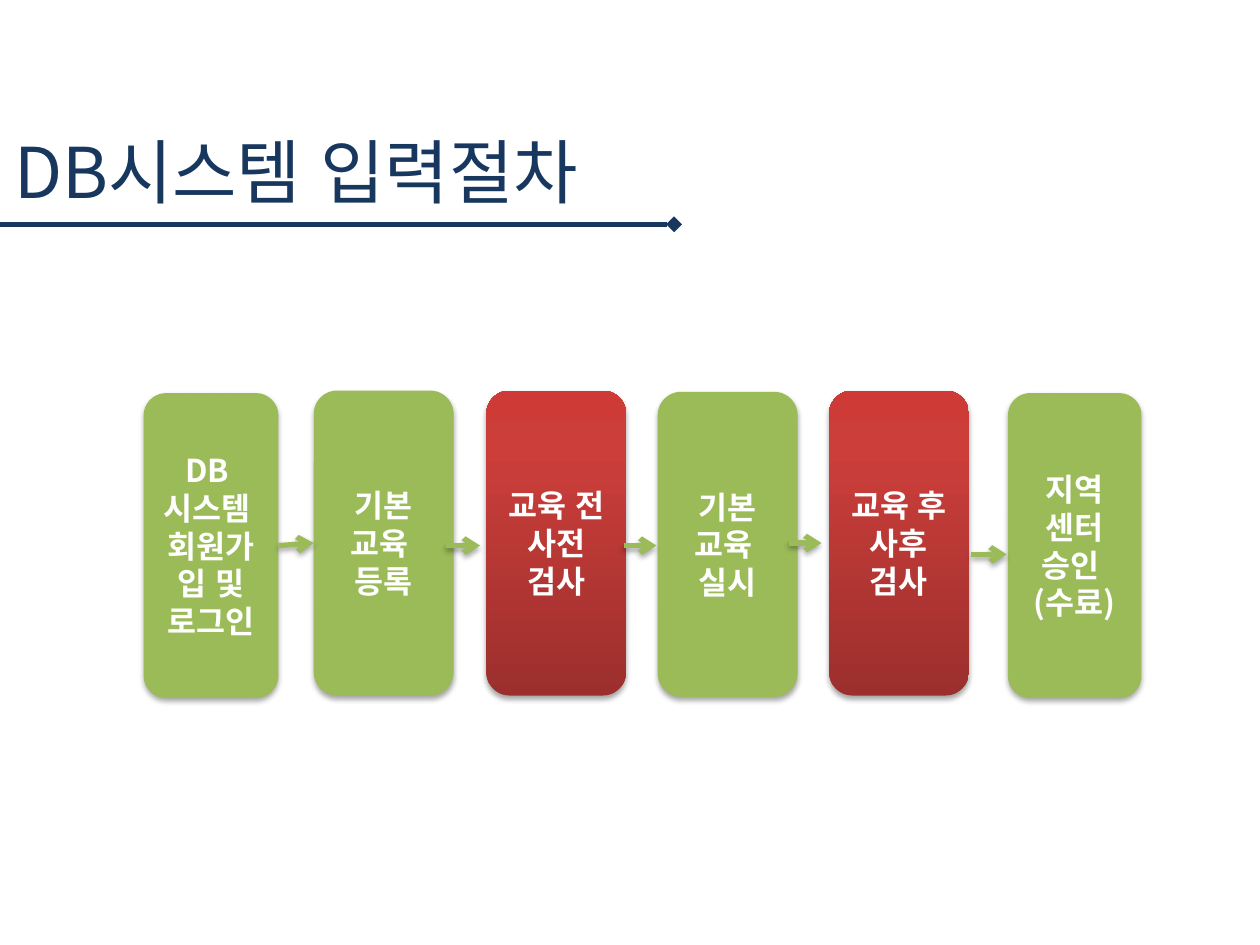
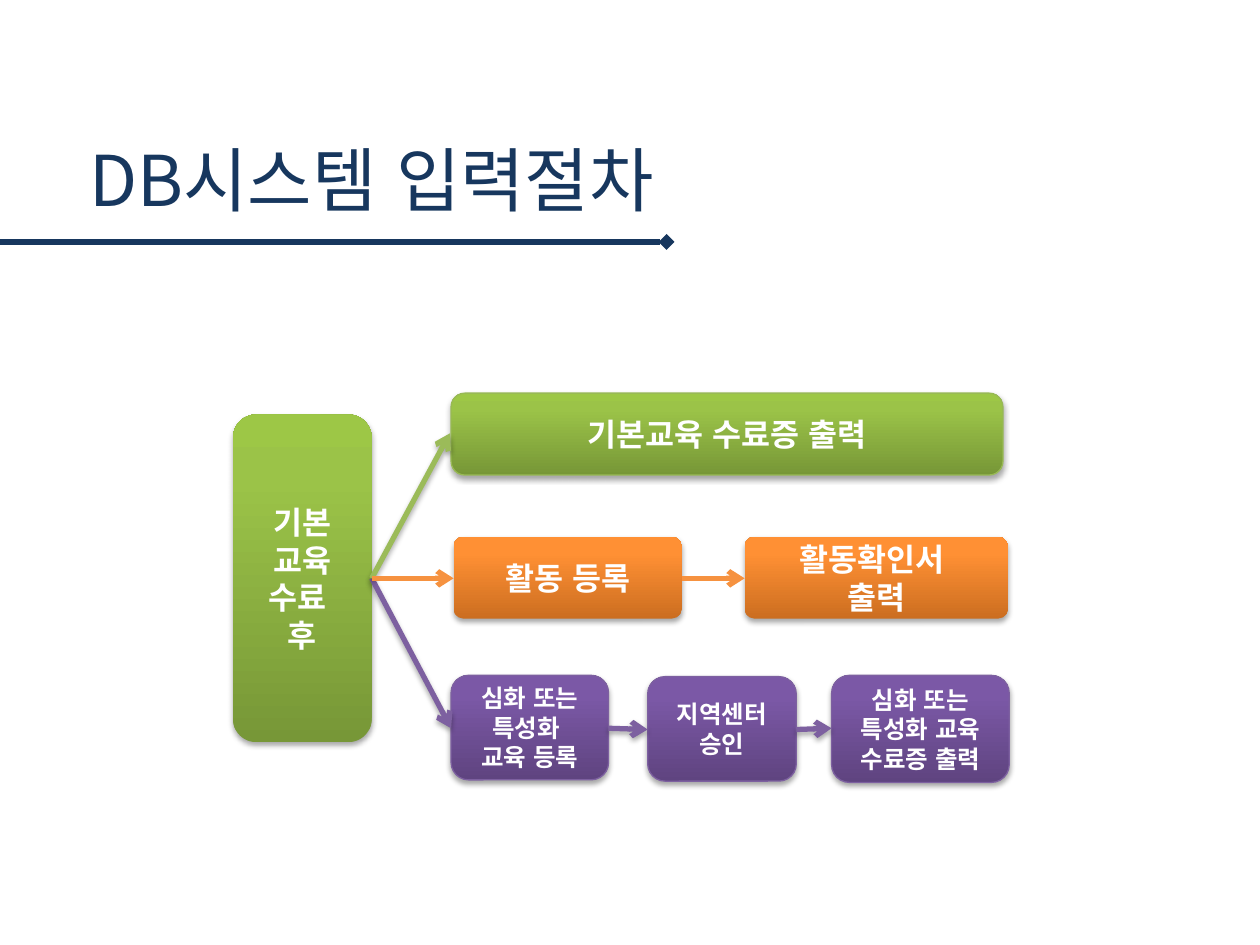
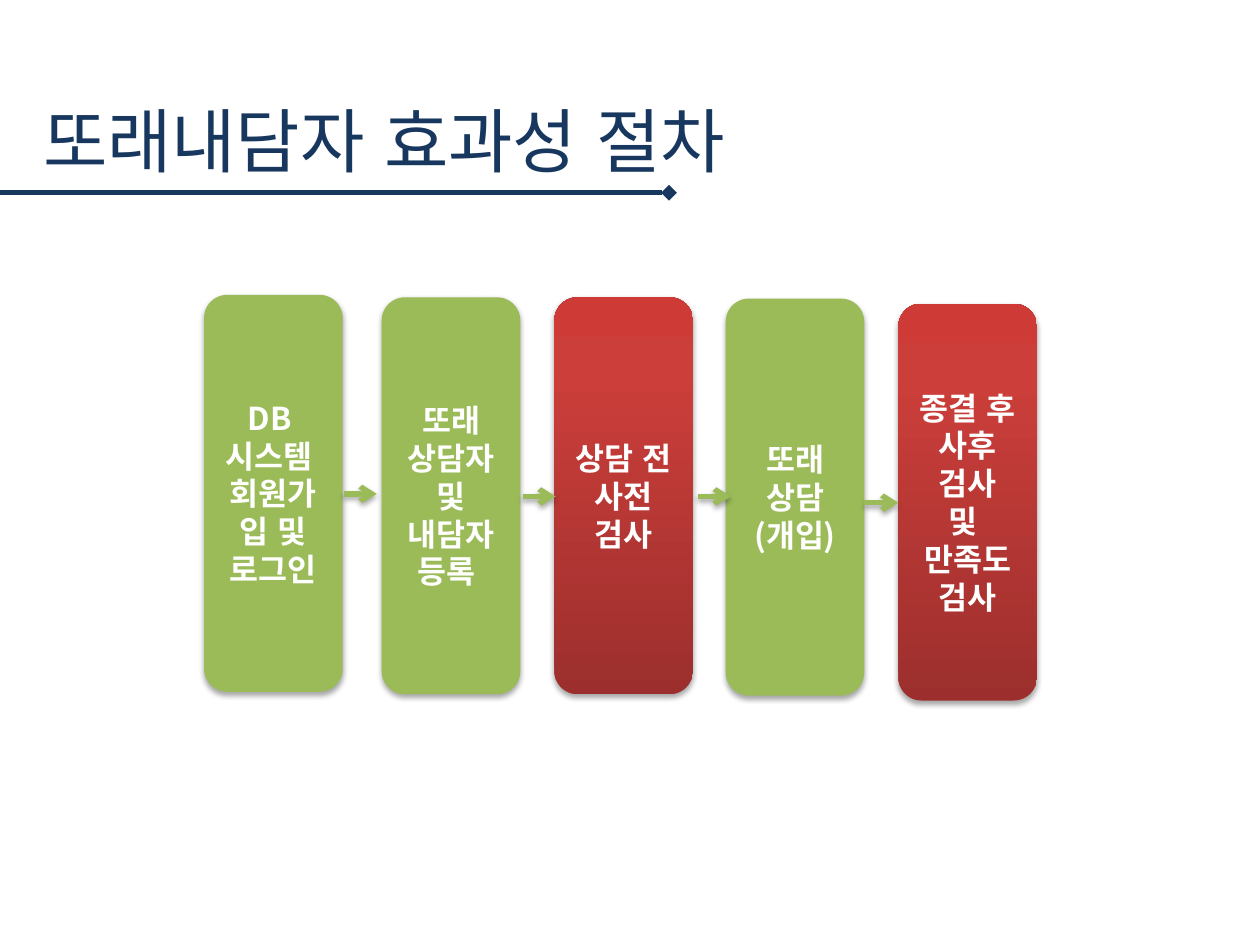
import pptx
import pptx.util
import pptx.dml.color
import pptx.enum.dml
import pptx.enum.lang
import pptx.enum.shapes
import pptx.enum.text
import pptx.oxml
import pptx.oxml.ns

Inches = pptx.util.Inches
FONT = "Noto Sans CJK KR"
COLORS = {
    "navy": "17375E", "white": "FFFFFF", "black": "000000",
    "green": "9BBB59", "edge": "98B955", "plum": "7D60A0", "amber": "F69240",
}
# Gradient stops from the foot of a box to its top
FADES = {
    "red": ("9C2F2D", "CB3E3A", "CE3B37"),
    "leaf": ("779737", "9BC348", "9DC746"),
    "orange": ("CC6E20", "FF9034", "FF9136"),
    "purple": ("5F4480", "7B58A6", "7C57A8"),
}
TITLE_W, TITLE_H, RULE_W = 6.16, 1.01, 5.35
JOIN = "DB \n시스템 \n회원가입 및 로그인"


def color(name):
    return pptx.dml.color.RGBColor.from_string(COLORS[name])


def node(xml):
    """Make a drawing element from its opening tag name and content."""
    tag = xml[1:].split(">")[0].split("/")[0].split(" ")[0]
    return pptx.oxml.parse_xml(
        xml.replace(tag, f"{tag} {pptx.oxml.ns.nsdecls('a')}", 1))


def write(frame, text, size=18, bold=True, ink="white"):
    """Fill a text frame, one centred paragraph per line of text."""
    frame.word_wrap = True
    frame.auto_size = pptx.enum.text.MSO_AUTO_SIZE.NONE
    frame.vertical_anchor = pptx.enum.text.MSO_ANCHOR.MIDDLE
    for i, line in enumerate(text.split("\n")):
        para = frame.paragraphs[0] if i == 0 else frame.add_paragraph()
        para.alignment = pptx.enum.text.PP_ALIGN.CENTER
        run = para.add_run()
        run.text = line
        font = run.font
        font.name, font.size, font.bold = FONT, pptx.util.Pt(size), bold
        font.color.rgb = color(ink)
        font.language_id = pptx.enum.lang.MSO_LANGUAGE_ID.KOREAN
        run._r.get_or_add_rPr().append(node(f'<a:ea typeface="{FONT}"/>'))


def shade(shape, on=True):
    """Give a shape the soft shadow, or none."""
    glow = (f'<a:outerShdw blurRad="40000" dist="23000" dir="5400000" '
            f'rotWithShape="0"><a:srgbClr val="{COLORS["black"]}">'
            f'<a:alpha val="35000"/></a:srgbClr></a:outerShdw>') if on else ""
    shape._element.spPr.append(node(f"<a:effectLst>{glow}</a:effectLst>"))


def card(slide, box, fill, text, size=18, edge=None, round=None):
    """Add a rounded box with its label."""
    shape = slide.shapes.add_shape(
        pptx.enum.shapes.MSO_SHAPE.ROUNDED_RECTANGLE, *map(Inches, box))
    if round:
        shape.adjustments[0] = round
    if fill in FADES:
        stops = "".join(
            f'<a:gs pos="{pos}000"><a:srgbClr val="{tone}"/></a:gs>'
            for pos, tone in zip((0, 80, 100), FADES[fill]))
        shape._element.spPr.insert(2, node(
            f'<a:gradFill rotWithShape="1"><a:gsLst>{stops}</a:gsLst>'
            f'<a:lin ang="16200000" scaled="0"/></a:gradFill>'))
    else:
        shape.fill.solid()
        shape.fill.fore_color.rgb = color(fill)
    if edge:
        shape.line.color.rgb = color(edge)
        shape.line.width = pptx.util.Pt(0.75)
    else:
        shape.line.fill.background()
    shade(shape)
    write(shape.text_frame, text, size=size)


def link(slide, ends, ink="green", tip="arrow", shadow=True):
    """Add a line that ends in an arrow or a diamond."""
    line = slide.shapes.add_connector(
        pptx.enum.shapes.MSO_CONNECTOR.STRAIGHT, *map(Inches, ends))
    line.line.color.rgb = color(ink)
    line.line.width = pptx.util.Pt(3)
    line.line._get_or_add_ln().append(node(f'<a:tailEnd type="{tip}"/>'))
    shade(line, shadow)


def head(slide, text, left, top, end, drop=0.93):
    """Place the title and the rule that lies below it."""
    title = slide.shapes.title
    title.left, title.top = Inches(left), Inches(top)
    title.width, title.height = Inches(TITLE_W), Inches(TITLE_H)
    write(title.text_frame, text, size=40, bold=False, ink="navy")
    y = top + drop
    link(slide, (end - RULE_W, y, end, y), "navy", "diamond", shadow=False)


def flow(slide, box, steps, links):
    """Place a row of steps, then the arrows between them."""
    left, top, height = box
    for x, y, width, fill, text in steps:
        card(slide, (left + x, top + y, width, height), fill, text)
    for x, y, run, rise in links:
        link(slide, (left + x, top + y, left + x + run, top + y - rise))


def tree(slide, box):
    """Place one root box and the three branches that leave it."""
    left, top = box
    leaf = dict(edge="edge")
    gold = dict(round=0.12)
    deep = dict(size=14, edge="plum")
    cards = [
        (0, 0.17, 1.1, 2.6, "leaf", "기본\n교육\n수료 \n후", {}),
        (1.73, 0, 4.38, 0.65, "leaf", "기본교육 수료증 출력", leaf),
        (1.75, 1.14, 1.81, 0.65, "orange", "활동 등록", gold),
        (4.06, 1.14, 2.09, 0.65, "orange", "활동확인서 \n출력", gold),
        (1.73, 2.24, 1.25, 0.83, "purple", "심화 또는\n특성화 \n교육 등록", deep),
        (3.29, 2.25, 1.18, 0.83, "purple", "지역센터 승인", deep),
        (4.75, 2.24, 1.41, 0.85, "purple", "심화 또는\n특성화 교육 수료증 출력", deep),
    ]
    for x, y, width, height, fill, text, style in cards:
        card(slide, (left + x, top + y, width, height), fill, text, **style)
    # Branches from the root, then arrows along the rows
    root = (1.1, 1.47)
    for start, end, ink in [
        (root, (1.73, 2.66), "plum"),
        (root, (1.72, 0.32), "green"),
        (root, (1.75, 1.47), "amber"),
        ((2.98, 2.66), (3.29, 2.67), "plum"),
        ((4.47, 2.67), (4.75, 2.66), "plum"),
        ((3.56, 1.47), (4.06, 1.47), "amber"),
    ]:
        ends = [a + b for a, b in zip(start + end, (left, top) * 2)]
        link(slide, ends, ink, shadow=ink != "amber")


def main():
    deck = pptx.Presentation()
    deck.slide_width, deck.slide_height = Inches(10), Inches(7.5)
    first, second, third = (
        deck.slides.add_slide(deck.slide_layouts[5]) for _ in range(3))

    # Entry of basic training
    head(first, "DB시스템 입력절차", -0.73, 0.85, 5.35)
    flow(first, (1.14, 3.1, 2.42), [
        (0, 0.02, 1.07, "green", JOIN),
        (1.35, 0, 1.11, "green", "기본\n교육 \n등록"),
        (2.72, 0, 1.11, "red", "교육 전\n사전\n검사"),
        (4.08, 0.01, 1.11, "green", "기본\n교육 \n실시"),
        (5.44, 0, 1.11, "red", "교육 후\n사후\n검사"),
        (6.86, 0.02, 1.06, "green", "지역\n센터\n승인 \n(수료)"),
    ], [
        (1.07, 1.23, 0.28, 0.02), (2.4, 1.23, 0.27, 0), (3.81, 1.23, 0.26, 0),
        (5.12, 1.21, 0.26, 0), (6.57, 1.3, 0.28, 0),
    ])

    # Paths after basic training
    head(second, "DB시스템 입력절차", -0.13, 0.91, 5.29, drop=1.01)
    tree(second, (1.85, 3.12))

    # Steps of peer counselling
    head(third, "또래내담자 효과성 절차", -0.03, 0.6, 5.31)
    flow(third, (1.62, 2.34, 3.15), [
        (0, 0, 1.1, "green", JOIN),
        (1.41, 0.02, 1.1, "green", "또래\n상담자\n및\n내담자 등록 "),
        (2.78, 0.02, 1.1, "red", "상담 전\n사전\n검사"),
        (4.14, 0.03, 1.1, "green", "또래\n상담\n(개입)"),
        (5.51, 0.07, 1.1, "red", "종결 후\n사후\n검사\n및 \n만족도 검사"),
    ], [
        (1.11, 1.58, 0.26, 0), (2.53, 1.6, 0.26, 0),
        (3.92, 1.6, 0.26, 0), (5.24, 1.65, 0.27, 0),
    ])
    deck.save("out.pptx")


if __name__ == "__main__":
    main()
